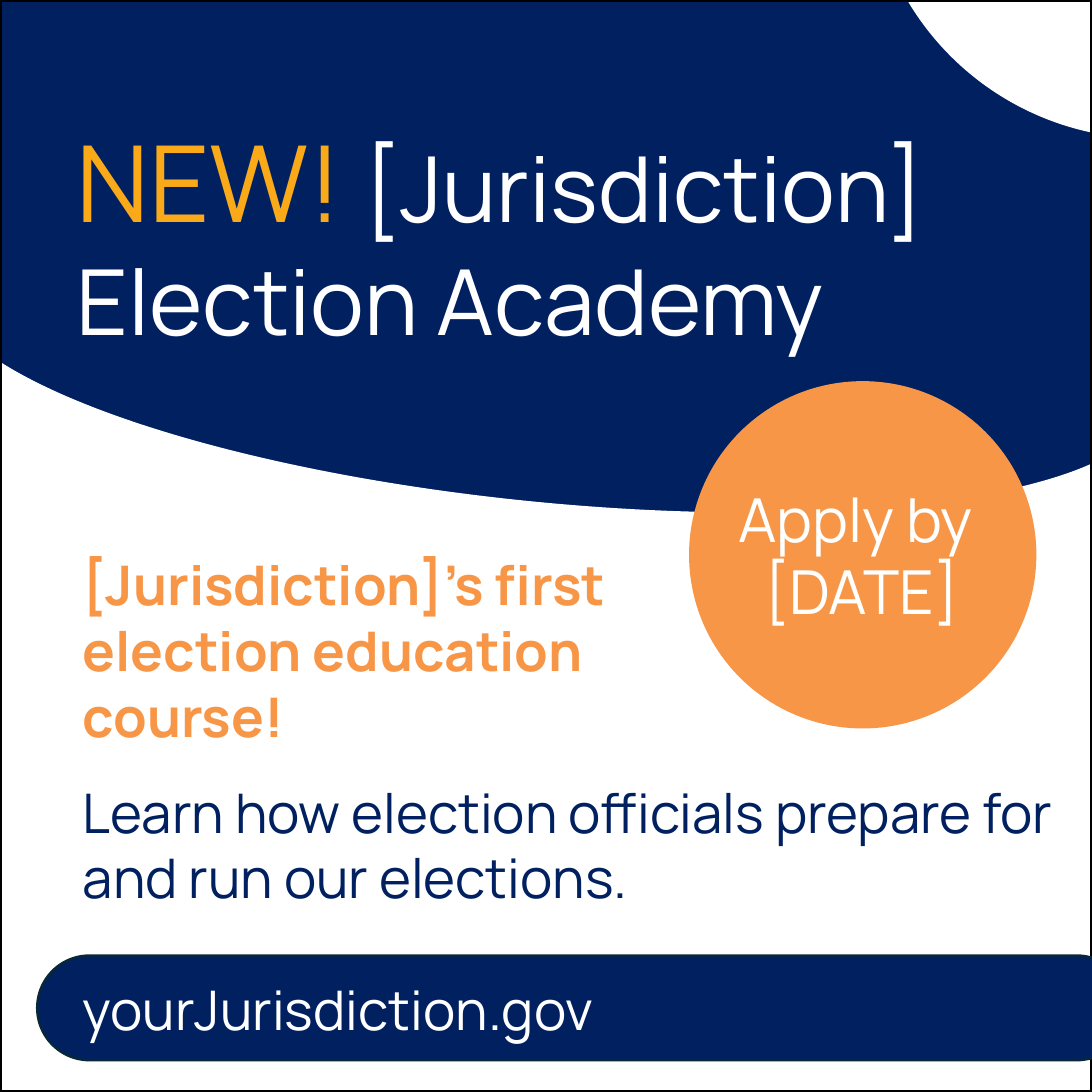
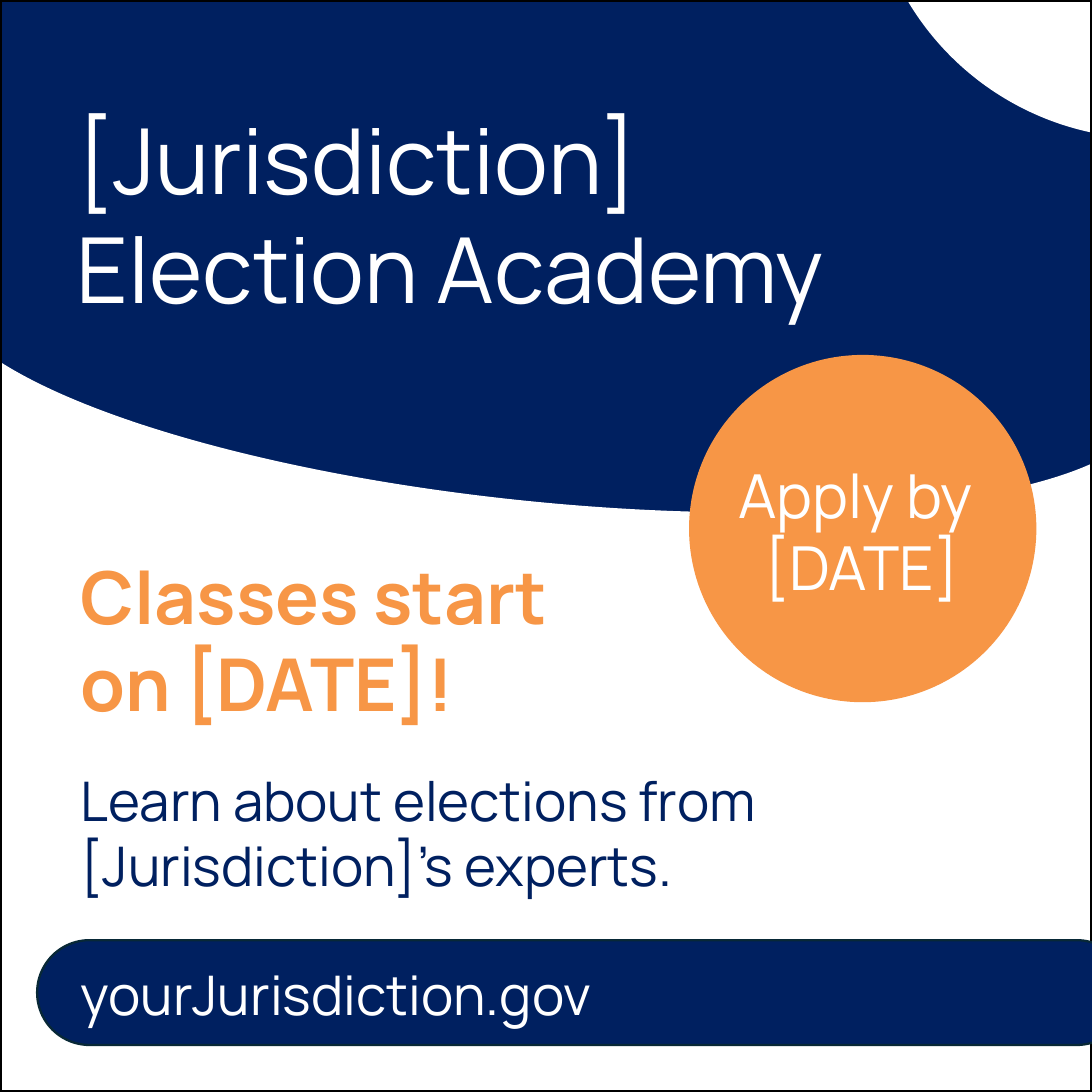
from pptx import Presentation
from pptx.dml.color import RGBColor
from pptx.enum.shapes import MSO_SHAPE
from pptx.enum.text import MSO_ANCHOR, MSO_AUTO_SIZE, PP_ALIGN
from pptx.util import Pt

FONT = "Manrope"
NAVY, ORANGE, GOLD, WHITE = "002060", "F79646", "FAAA19", "FFFFFF"
BLACK, PILL_EDGE = "000000", "082836"
SIDE = 720
BADGE_SIZE = 229

# Each text is a list of lines, each line a list of (words, size, colour).
BADGE_LINES = [[("Apply by ", 40, WHITE)], [("[DATE]", 40, WHITE)]]
ADDRESS_LINES = [[("yourJurisdiction.gov", 36, WHITE)]]
ACADEMY_LINE = [("Election Academy", 60, WHITE)]

POSTS = [
    {
        "title": [[("NEW! ", 70, GOLD), ("[Jurisdiction] ", 60, WHITE)], ACADEMY_LINE],
        "title_at": (43.2, 73.4, 661.7, 164.9),
        "lead": [[("[Jurisdiction]’s first election education course!", 36, ORANGE)]],
        "lead_size": (468.7, 138.2),
        "detail": [[("Learn how election officials prepare for and run our elections.", 36, NAVY)]],
        "left": 47.5,
        "badge_top": 251.3,
        "badge_text_top": 313.9,
        "detail_top": 509.8,
        "pill_top": 630,
    },
    {
        "title": [[("[Jurisdiction] ", 60, WHITE)], ACADEMY_LINE],
        "title_at": (43.2, 64.8, 650.2, 152.6),
        "lead": [[("Classes start ", 48, ORANGE)], [("on [DATE]!", 48, ORANGE)]],
        "lead_size": (440.6, 123.8),
        "detail": [[("Learn about elections from [Jurisdiction]’s experts.", 36, NAVY)]],
        "left": 46.1,
        "badge_top": 234,
        "badge_text_top": 298.1,
        "detail_top": 501.8,
        "pill_top": 619.9,
    },
]


def colour(hex_code):
    return RGBColor.from_string(hex_code)


def add_figure(page, kind, at, fill=None, line=None, line_width=1.5):
    shape = page.shapes.add_shape(kind, *map(Pt, at))
    shape.shadow.inherit = False
    if fill:
        shape.fill.solid()
        shape.fill.fore_color.rgb = colour(fill)
    else:
        shape.fill.background()
    if line:
        shape.line.color.rgb = colour(line)
        shape.line.width = Pt(line_width)
    else:
        shape.line.fill.background()
    return shape


def write_lines(box, lines, bold=False, align=PP_ALIGN.LEFT):
    frame = box.text_frame
    frame.word_wrap = True
    frame.auto_size = MSO_AUTO_SIZE.SHAPE_TO_FIT_TEXT
    frame.vertical_anchor = MSO_ANCHOR.TOP
    para = frame.paragraphs[0]
    para.alignment = align
    for number, line in enumerate(lines):
        if number:
            para.add_line_break()
        for words, size, hex_code in line:
            span = para.add_run()
            span.text = words
            span.font.name = FONT
            span.font.size = Pt(size)
            span.font.bold = bold
            span.font.color.rgb = colour(hex_code)


def add_text(page, at, lines, **style):
    write_lines(page.shapes.add_textbox(*map(Pt, at)), lines, **style)


def add_backdrop(page):
    """Navy field cut by a white corner circle and a white curved lower edge."""
    add_figure(page, MSO_SHAPE.RECTANGLE, (0, 0, SIDE, 465.1), NAVY)
    add_figure(page, MSO_SHAPE.OVAL, (572.4, -280.1, 371.5, 371.5), WHITE)
    curve = add_figure(page, MSO_SHAPE.BLOCK_ARC, (-221, -57.6, 1162.1, 568.1), WHITE)
    curve.rotation = 185.7
    for index, value in enumerate((110.735, 213.955, 0.316)):
        curve.adjustments[index] = value
    add_figure(page, MSO_SHAPE.RECTANGLE, (-1.4, 368.6, 180, 173.5), WHITE)


def place_title(page, at, lines):
    title = page.shapes.title
    title.left, title.top, title.width, title.height = map(Pt, at)
    write_lines(title, lines)
    # Bring the title in front of the backdrop.
    title.element.getparent().append(title.element)


def add_pill(page, left, top):
    pill = add_figure(page, MSO_SHAPE.ROUNDED_RECTANGLE, (24.5, top, SIDE, 69.1),
                      NAVY, PILL_EDGE)
    pill.adjustments[0] = 0.5
    add_text(page, (left, top + 10, 676.1, 51.1), ADDRESS_LINES)


def add_post(deck, post):
    page = deck.slides.add_slide(deck.slide_layouts[5])
    left = post["left"]
    add_backdrop(page)
    add_figure(page, MSO_SHAPE.OVAL,
               (454.3, post["badge_top"], BADGE_SIZE, BADGE_SIZE), ORANGE)
    place_title(page, post["title_at"], post["title"])
    add_text(page, (left, 360, *post["lead_size"]), post["lead"], bold=True)
    add_text(page, (445, post["badge_text_top"], 246.2, 104.4), BADGE_LINES,
             align=PP_ALIGN.CENTER)
    add_figure(page, MSO_SHAPE.RECTANGLE, (0, 0, SIDE, SIDE), line=BLACK, line_width=3)
    add_text(page, (left, post["detail_top"], 657.4, 94.3), post["detail"])
    add_pill(page, left, post["pill_top"])


def main():
    deck = Presentation()
    deck.slide_width = deck.slide_height = Pt(SIDE)
    for post in POSTS:
        add_post(deck, post)
    deck.save("out.pptx")


if __name__ == "__main__":
    main()
